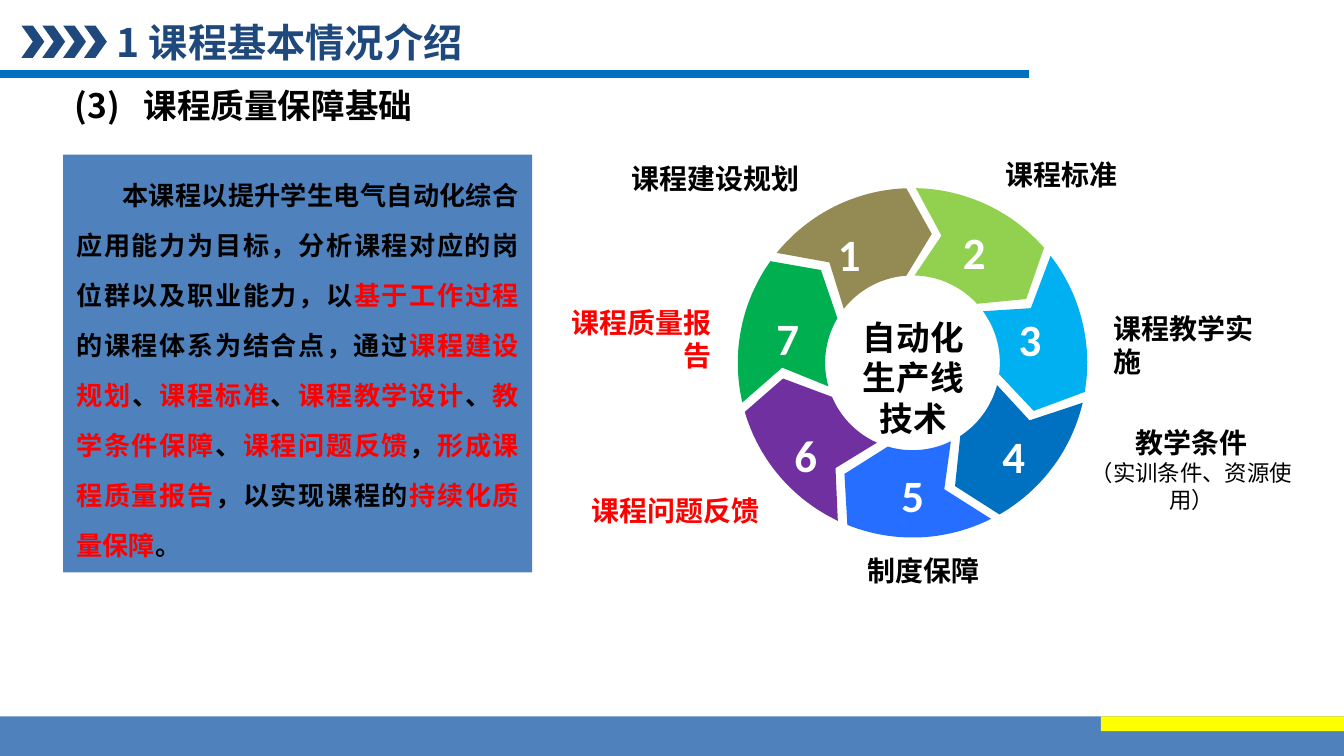
"""Build the slide on how the quality of a course is assured."""
from math import cos, radians, sin

from lxml import etree
from pptx import Presentation
from pptx.dml.color import RGBColor
from pptx.enum.shapes import MSO_CONNECTOR, MSO_SHAPE
from pptx.enum.text import MSO_ANCHOR, MSO_AUTO_SIZE, PP_ALIGN
from pptx.oxml.ns import qn
from pptx.util import Inches, Pt

LEFT, CENTER, RIGHT = PP_ALIGN.LEFT, PP_ALIGN.CENTER, PP_ALIGN.RIGHT
JUSTIFY = PP_ALIGN.JUSTIFY
TOP, MIDDLE = MSO_ANCHOR.TOP, MSO_ANCHOR.MIDDLE
RECTANGLE, CHEVRON = MSO_SHAPE.RECTANGLE, MSO_SHAPE.CHEVRON
STRAIGHT, FIXED_SIZE = MSO_CONNECTOR.STRAIGHT, MSO_AUTO_SIZE.NONE

CHINESE, LATIN = "Noto Sans CJK SC", "Calibri"
COLORS = {
    "black": "000000", "white": "FFFFFF", "red": "FF0000", "yellow": "FFFF00",
    "navy": "1F497D", "rule": "0070C0", "panel": "4F81BD",
}
WIDTH = 10
HEIGHT = WIDTH * 9 / 16
RING_X, RING_Y = 6.79, 2.7
OUTER, POINT, INNER = 1.3, 0.97, 0.65

# Degrees clockwise from the top: outer start, outer end, tip, inner end, inner start, notch
STEPS = [
    ("2 ", "92D050", (1.1, 48.8, 60.7, 47.5, 1.3, 12.8)),
    ("3 ", "00B0F0", (52.2, 99.6, 111.6, 97.5, 53.8, 65.2)),
    ("4 ", "0070C0", (103.2, 150.2, 161, 146.9, 104.8, 116.2)),
    ("5 ", "256EFF", (153.3, 201.9, 211.5, 196.5, 154, 165.9)),
    ("6 ", "7030A0", (205.3, 253.7, 263.1, 247.1, 204, 216.2)),
    ("7", "00B050", (256.9, 305.6, 315.4, 300.7, 254.4, 267.9)),
    ("1 ", "948A54", (309, 358, 368.5, 356, 308.2, 320.4)),
]
LABELS = [
    ("课程标准", (7.38, 1.01, 2.5, 0.57), LEFT, "black"),
    ("课程教学实施", (8.19, 2.28, 1.41, 0.57), LEFT, "black"),
    ("教学条件", (7.94, 3.14, 1.85, 0.7), CENTER, "black"),
    ("制度保障", (5.59, 3.82, 2.56, 0.84), CENTER, "black"),
    ("课程建设规划", (4.58, 1.04, 1.47, 0.58), RIGHT, "black"),
    ("课程质量报告", (3.96, 2.18, 1.43, 0.68), RIGHT, "red"),
    ("课程问题反馈", (4.26, 3.43, 1.53, 0.74), CENTER, "red"),
]
CONDITIONS_NOTE = "（实训条件、资源使用）"
SUMMARY = [
    ("本课程以提升学生电气自动化综合应用能力为目标，分析课程对应的岗位群以及职业能力，以", "black"),
    ("基于工作过程", "red"), ("的课程体系为结合点，通过", "black"),
    ("课程建设规划", "red"), ("、", "black"), ("课程标准", "red"), ("、", "black"),
    ("课程教学设计", "red"), ("、", "black"), ("教学条件保障", "red"), ("、", "black"),
    ("课程问题反馈", "red"), ("，", "black"), ("形成课程质量报告", "red"),
    ("，以实现课程的", "black"), ("持续化质量保障", "red"), ("。", "black"),
]


def rgb(name):
    """Return the colour stored under a name."""
    return RGBColor.from_string(COLORS[name])


def style(paragraph, size, color, align=LEFT, face=CHINESE, bold=True):
    """Set the alignment and font of a paragraph."""
    paragraph.alignment = align
    font = paragraph.font
    font.size, font.bold, font.name = Pt(size), bold, face
    font.color.rgb = rgb(color)
    defaults = paragraph._p.pPr.find(qn("a:defRPr"))
    etree.SubElement(defaults, qn("a:ea")).set("typeface", CHINESE)


def paint(shape, color):
    """Give a shape a flat fill without line or shadow."""
    shape.shadow.inherit = False
    shape.fill.solid()
    shape.fill.fore_color.rgb = color
    shape.line.fill.background()


def add_block(slide, kind, box, color):
    """Add a flat preset shape."""
    block = slide.shapes.add_shape(kind, *map(Inches, box))
    paint(block, rgb(color))
    return block


def add_text(slide, text, box, size, color, align=LEFT, anchor=TOP):
    """Add a wrapped text box and return its frame."""
    frame = slide.shapes.add_textbox(*map(Inches, box)).text_frame
    frame.word_wrap = True
    frame.vertical_anchor = anchor
    frame.text = text
    style(frame.paragraphs[0], size, color, align)
    return frame


def ring_point(angle, radius):
    """Return the place of a point on the ring."""
    turn = radians(angle)
    return (Inches(RING_X + radius * sin(turn)), Inches(RING_Y - radius * cos(turn)))


def arc(start, end, radius, pieces=24):
    """Return points along an arc of the ring."""
    return [ring_point(start + (end - start) * i / pieces, radius)
            for i in range(pieces + 1)]


def add_step(slide, number, color, angles):
    """Add one numbered arrow segment of the ring."""
    start, end, tip, inner_end, inner_start, notch = angles
    outline = [
        *arc(start, end, OUTER), ring_point(tip, POINT),
        *arc(inner_end, inner_start, INNER), ring_point(notch, POINT),
    ]
    builder = slide.shapes.build_freeform(*outline[0])
    builder.add_line_segments(outline[1:], close=True)
    segment = builder.convert_to_shape()
    paint(segment, RGBColor.from_string(color))
    frame = segment.text_frame
    frame.margin_left = frame.margin_right = frame.margin_top = frame.margin_bottom = 0
    frame.vertical_anchor = MIDDLE
    frame.text = number
    frame.paragraphs[0].line_spacing = 1.2
    style(frame.paragraphs[0], 24, "white", CENTER, LATIN)


def add_header(slide):
    """Add the title, the rule, the chevrons and the subtitle."""
    rule = slide.shapes.add_connector(
        STRAIGHT, 0, Inches(0.55), Inches(7.66), Inches(0.55))
    rule.line.color.rgb, rule.line.width = rgb("rule"), Pt(4)
    etree.SubElement(rule._element.spPr, qn("a:effectLst"))

    title = slide.shapes.title
    title.left, title.top, title.width, title.height = map(Inches, (0.8, 0.11, 4.93, 0.4))
    frame = title.text_frame
    frame.auto_size, frame.vertical_anchor = FIXED_SIZE, MIDDLE
    frame.margin_left = frame.margin_right = Inches(0.07)
    frame.margin_top = frame.margin_bottom = Inches(0.04)
    frame.text = "1 课程基本情况介绍"
    style(frame.paragraphs[0], 21, "navy")

    for i in range(4):
        add_block(slide, CHEVRON, (0.16 + 0.155 * i, 0.19, 0.17, 0.24), "navy")

    frame = slide.shapes.add_textbox(*map(Inches, (0.46, 0.58, 7.3, 0.4))).text_frame
    frame.word_wrap = True
    frame.text = "(3)\t课程质量保障基础"
    subtitle = frame.paragraphs[0]
    tabs = etree.SubElement(subtitle._p.get_or_add_pPr(), qn("a:tabLst"))
    etree.SubElement(tabs, qn("a:tab"), pos=str(Inches(0.51)), algn="l")
    style(subtitle, 18, "black")


def add_summary(slide):
    """Add the panel of text with its key terms in red."""
    panel = add_block(slide, RECTANGLE, (0.47, 1.15, 3.49, 3.11), "panel")
    frame = panel.text_frame
    frame.word_wrap, frame.vertical_anchor = True, TOP
    summary = frame.paragraphs[0]
    summary.line_spacing = Pt(26.8)
    summary._p.get_or_add_pPr().set("indent", str(Inches(0.34)))
    style(summary, 14, "black", JUSTIFY)
    for text, color in SUMMARY:
        run = summary.add_run()
        run.text = text
        run.font.color.rgb = rgb(color)


def add_ring(slide):
    """Add the ring of steps with its labels and centre."""
    for step in STEPS:
        add_step(slide, *step)
    for text, box, align, color in LABELS:
        frame = add_text(slide, text, box, 15, color, align, MIDDLE)
        if text == "教学条件":
            note = frame.add_paragraph()
            note.text = CONDITIONS_NOTE
            style(note, 12, "black", CENTER, LATIN, False)
    add_text(slide, "自动化生产线技术", (6.21, 2.31, 1.17, 1.01), 18, "black", CENTER)


def main():
    """Build and save the slide."""
    deck = Presentation()
    deck.slide_width, deck.slide_height = Inches(WIDTH), Inches(HEIGHT)
    slide = deck.slides.add_slide(deck.slide_layouts[5])
    add_header(slide)
    add_ring(slide)
    add_summary(slide)
    add_block(slide, RECTANGLE, (0, 5.33, WIDTH, HEIGHT - 5.33), "panel")
    add_block(slide, RECTANGLE, (8.19, 5.33, WIDTH - 8.19, 0.11), "yellow")
    deck.save("out.pptx")


if __name__ == "__main__":
    main()
